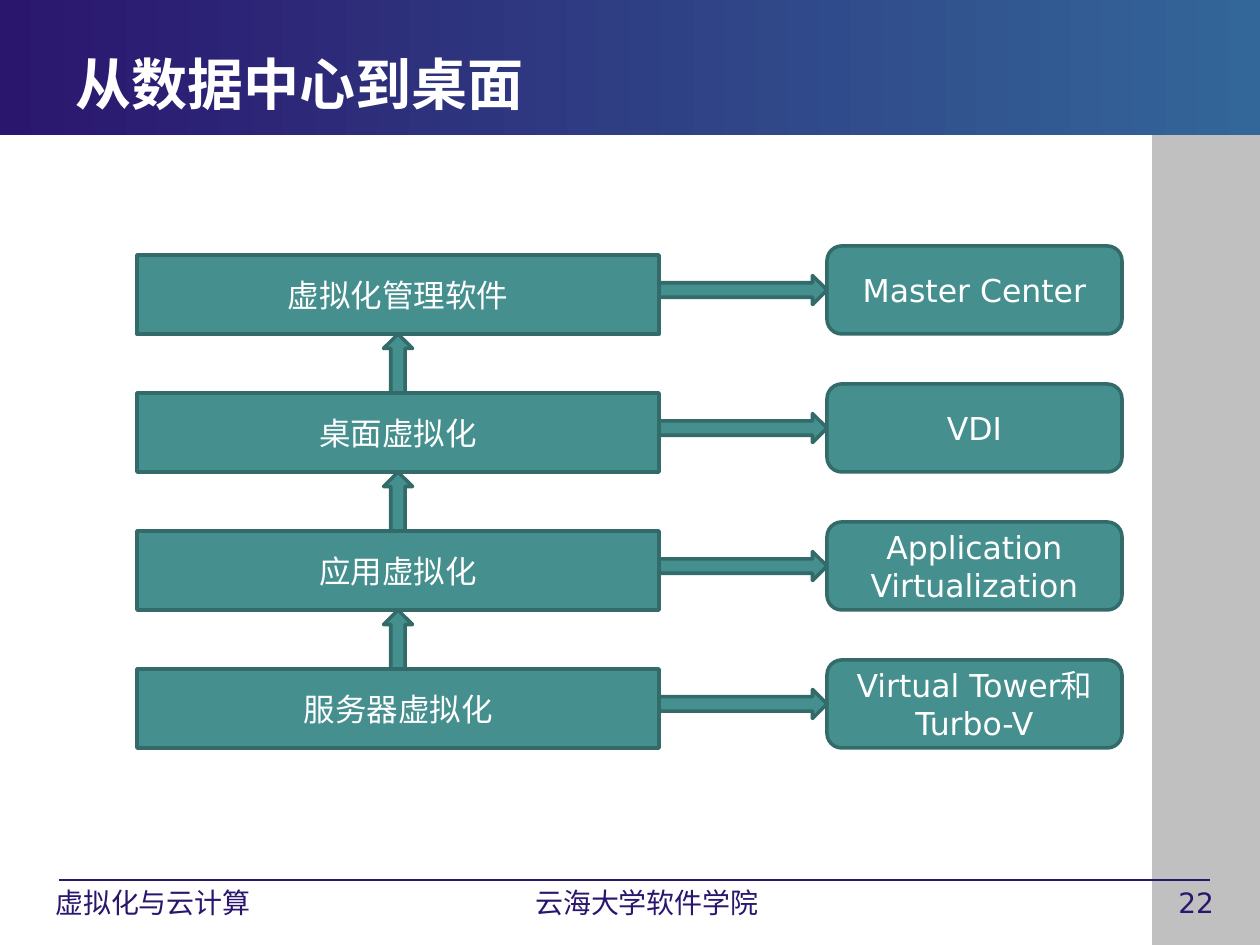
from pptx import Presentation
from pptx.dml.color import RGBColor
from pptx.enum.shapes import MSO_CONNECTOR, MSO_SHAPE
from pptx.enum.text import MSO_ANCHOR, PP_ALIGN
from pptx.oxml import parse_xml
from pptx.oxml.ns import nsdecls

FONT = "DejaVu Sans"
COLORS = {
    "navy": "2B166E",
    "blue": "336699",
    "gray": "C0C0C0",
    "teal": "458F8F",
    "dark_teal": "336A6A",
    "white": "FFFFFF",
}
LAYERS = [
    ("虚拟化管理软件", "Master Center"),
    ("桌面虚拟化", "VDI"),
    ("应用虚拟化", "Application Virtualization"),
    ("服务器虚拟化", "Virtual Tower和Turbo-V"),
]


def px(length):
    """Turn pixels into EMU."""
    return round(length * 914400 / 126)


def color(name):
    """Return the named colour."""
    return RGBColor.from_string(COLORS[name])


def write_text(shape, text, size, color_name, align, bold=False):
    """Write one wrapped, vertically centred paragraph in a shape."""
    frame = shape.text_frame
    frame.word_wrap = True
    frame.vertical_anchor = MSO_ANCHOR.MIDDLE
    frame.text = text
    paragraph = frame.paragraphs[0]
    paragraph.alignment = align
    font = paragraph.font
    font.name, font.bold = FONT, bold
    font.size = size * 12700
    font.color.rgb = color(color_name)


def add_label(slide, box, text, size, color_name, align, bold=False):
    """Add a text box."""
    label = slide.shapes.add_textbox(*map(px, box))
    write_text(label, text, size, color_name, align, bold)


def add_panel(slide, box, fill):
    """Add a plain rectangle without outline."""
    panel = slide.shapes.add_shape(MSO_SHAPE.RECTANGLE, *map(px, box))
    panel.shadow.inherit = False
    panel.line.fill.background()
    panel.fill.solid()
    panel.fill.fore_color.rgb = color(fill)
    return panel


def add_block(slide, preset, box, text=""):
    """Add an outlined teal shape, with text if given."""
    block = slide.shapes.add_shape(preset, *map(px, box))
    block.shadow.inherit = False
    block.fill.solid()
    block.fill.fore_color.rgb = color("teal")
    block.line.color.rgb = color("dark_teal")
    block.line.width = 2 * 12700
    if text:
        write_text(block, text, 18, "white", PP_ALIGN.CENTER)


def add_header(slide, box, title):
    """Add the gradient band and the title."""
    left, top, width, height = box
    band = add_panel(slide, box, "navy")
    band.fill.gradient()
    band.fill.gradient_angle = 0
    for stop, name, position in zip(band.fill.gradient_stops, ("navy", "blue"), (0, 1)):
        stop.color.rgb = color(name)
        stop.position = position
    title_box = (left + 63, top + 44, 850, 78)
    add_label(slide, title_box, title, 32, "white", PP_ALIGN.LEFT, True)


def add_footer(slide, box, course, school, number):
    """Add the footer rule and its three labels."""
    left, top, width, height = box
    rule = slide.shapes.add_connector(
        MSO_CONNECTOR.STRAIGHT, px(left), px(top), px(left + width), px(top)
    )
    rule.line.color.rgb = color("navy")
    rule.line.width = 9525
    rule._element.spPr.append(parse_xml(f"<a:effectLst {nsdecls('a')}/>"))
    labels = [
        (-28, 244, course, PP_ALIGN.CENTER),
        (446, 284, school, PP_ALIGN.CENTER),
        (1107, 90, number, PP_ALIGN.LEFT),
    ]
    for offset, label_width, text, align in labels:
        label_box = (left + offset, top, label_width, height)
        add_label(slide, label_box, text, 16, "navy", align)


def add_layers(slide, box, layers):
    """Stack the layers, each pointing to its product and to the layer above."""
    left, top, width, height = box
    layer_width, layer_height, product_width, product_height = 522, 79, 295, 88
    arrow = 29
    pitch = (height - product_height) / (len(layers) - 1)
    product_left = left + width - product_width
    for index, (layer, product) in enumerate(layers):
        row_top = top + index * pitch
        layer_top = row_top + product_height - layer_height
        arrow_top = row_top + (product_height - arrow) / 2
        layer_right = left + layer_width
        add_block(slide, MSO_SHAPE.RECTANGLE,
                  (left, layer_top, layer_width, layer_height), layer)
        add_block(slide, MSO_SHAPE.ROUNDED_RECTANGLE,
                  (product_left, row_top, product_width, product_height), product)
        add_block(slide, MSO_SHAPE.RIGHT_ARROW,
                  (layer_right, arrow_top, product_left - layer_right, arrow))
        if index:
            gap = pitch - layer_height
            add_block(slide, MSO_SHAPE.UP_ARROW,
                      (left + (layer_width - arrow) / 2, layer_top - gap, arrow, gap))


def main():
    """Build and save the slide."""
    presentation = Presentation()
    presentation.slide_width, presentation.slide_height = px(1260), px(945)
    slide = presentation.slides.add_slide(presentation.slide_layouts[6])
    add_panel(slide, (1152, 135, 108, 810), "gray")
    add_header(slide, (0, 0, 1260, 135), "从数据中心到桌面")
    add_footer(slide, (59, 880, 1151, 44), "虚拟化与云计算", "云海大学软件学院", "22")
    add_layers(slide, (137, 246, 985, 502), LAYERS)
    presentation.save("out.pptx")


if __name__ == "__main__":
    main()
